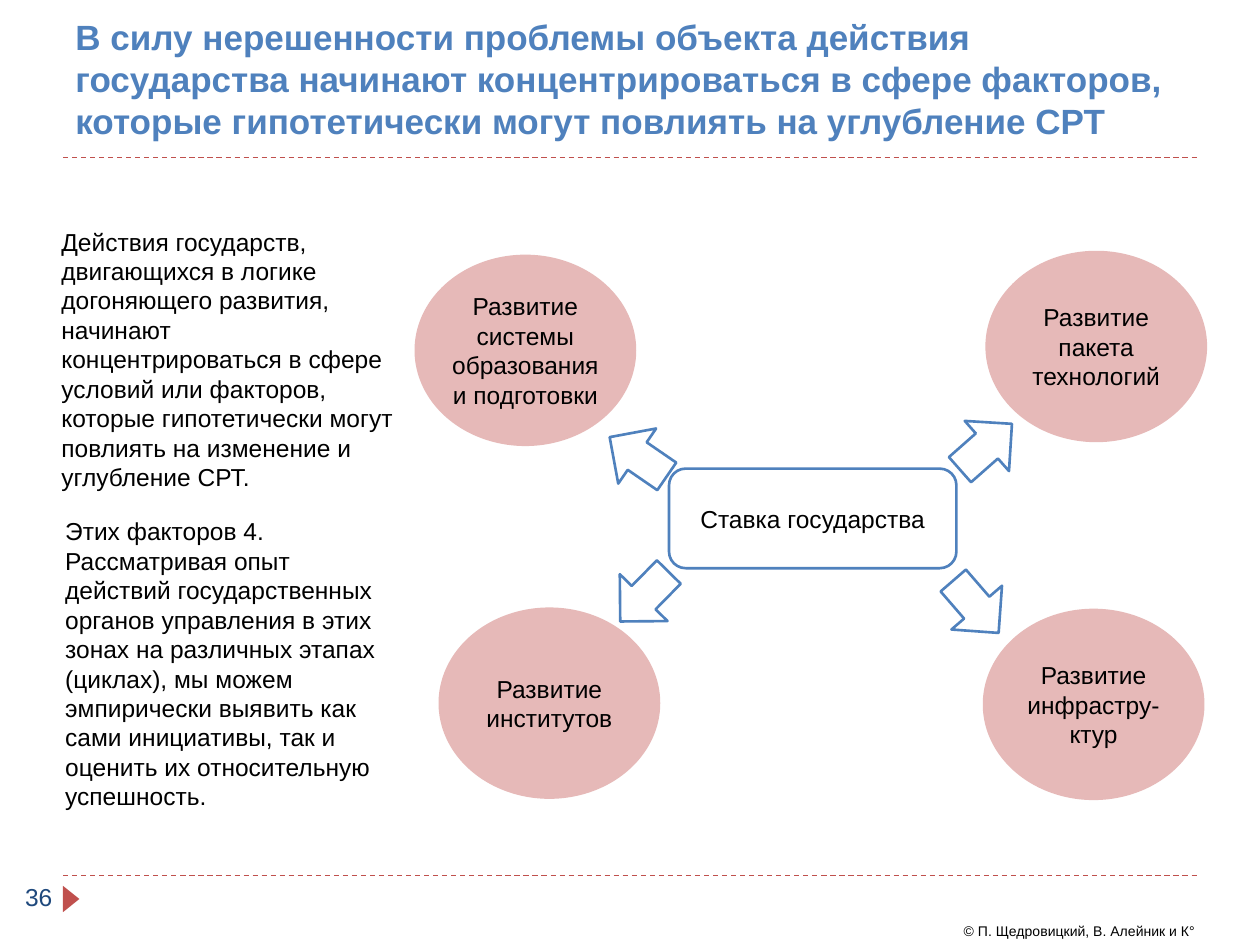
from lxml.etree import SubElement as Sub
from pptx import Presentation
from pptx.dml.color import RGBColor as RGB
from pptx.enum.dml import MSO_LINE as Dash
from pptx.enum.shapes import MSO_CONNECTOR as Conn, MSO_SHAPE as Kind
from pptx.enum.text import MSO_ANCHOR as Anchor, PP_ALIGN as Align
from pptx.oxml.ns import qn
from pptx.util import Pt

BLACK = RGB(0x00, 0x00, 0x00)
WHITE = RGB(0xFF, 0xFF, 0xFF)
BLUE = RGB(0x4F, 0x81, 0xBD)
NAVY = RGB(0x1F, 0x49, 0x7D)
RED = RGB(0xC0, 0x50, 0x4D)
PINK = RGB(0xE6, 0xB9, 0xB8)

INSET = (7.2, 3.6, 7.2, 3.6)


def write(shape, text, size=14, color=BLACK, bold=False, align=Align.LEFT,
          anchor=Anchor.TOP, inset=INSET):
    frame = shape.text_frame
    frame.word_wrap = True
    frame.vertical_anchor = anchor
    (frame.margin_left, frame.margin_top,
     frame.margin_right, frame.margin_bottom) = map(Pt, inset)
    para = frame.paragraphs[0]
    para.text = text
    para.alignment = align
    font = para.font
    font.name, font.size, font.bold = "Arial", Pt(size), bold
    font.color.rgb = color


def add_text(slide, box, text, **style):
    write(slide.shapes.add_textbox(*map(Pt, box)), text, **style)


def add_form(slide, kind, box, fill, line=None, turn=0):
    form = slide.shapes.add_shape(kind, *map(Pt, box))
    form.shadow.inherit = False
    form.rotation = turn
    form.fill.solid()
    form.fill.fore_color.rgb = fill
    if line is None:
        form.line.fill.background()
    else:
        form.line.color.rgb = line
        form.line.width = Pt(1.5)
    return form


def add_rule(slide, left, top, width):
    rule = slide.shapes.add_connector(
        Conn.STRAIGHT, Pt(left), Pt(top), Pt(left + width), Pt(top))
    rule.line.color.rgb = RED
    rule.line.width = Pt(0.75)
    rule.line.dash_style = Dash.DASH
    Sub(rule._element.spPr, qn("a:effectLst"))


def add_head(slide, left, top, width, height):
    add_rule(slide, left, top + height, width)
    add_text(slide, (left, top, width, height),
             "В силу нерешенности проблемы объекта действия государства "
             "начинают концентрироваться в сфере факторов, которые "
             "гипотетически могут повлиять на углубление СРТ",
             size=20, color=BLUE, bold=True, anchor=Anchor.MIDDLE)


def add_foot(slide, left, top, width):
    add_rule(slide, left, top, width)
    # Page marker and number
    add_form(slide, Kind.ISOSCELES_TRIANGLE,
             (left - 2.9, top + 8.6, 15.1, 9.4), RED, turn=90)
    add_text(slide, (left - 28.8, top, 32.4, 28.8), "36", color=NAVY)
    # Credit
    add_text(slide, (left + 507.6, top + 23, 174.2, 17.3),
             "© П. Щедровицкий, В. Алейник и К°", size=8)


def add_notes(slide, left, top, width):
    add_text(slide, (left, top, width, 160),
             "Действия государств, двигающихся в логике догоняющего "
             "развития, начинают концентрироваться в сфере условий или "
             "факторов, которые гипотетически могут повлиять на изменение "
             "и углубление СРТ.", inset=(7.2, 3.6, 2.9, 3.6))
    add_text(slide, (left + 2.2, top + 165.6, width - 2.2, 177),
             "Этих факторов 4. Рассматривая опыт действий государственных "
             "органов управления в этих зонах на различных этапах (циклах), "
             "мы можем эмпирически выявить как сами инициативы, так и "
             "оценить их относительную успешность.",
             inset=(7.2, 3.6, 0, 3.6))


def add_map(slide, left, top):
    # Central stake
    mid = {"align": Align.CENTER, "anchor": Anchor.MIDDLE}
    hub = add_form(slide, Kind.ROUNDED_RECTANGLE,
                   (left + 145.4, top + 124.5, 164.2, 56.9), WHITE, BLUE)
    write(hub, "Ставка государства", **mid)

    # Arrows out to the factors: x, y, turn
    for x, y, turn in ((108, 98.6, 34.5), (306.7, 92.9, 138.6),
                       (111.6, 178.6, 314.5), (301, 184.3, 229.1)):
        add_form(slide, Kind.LEFT_ARROW, (left + x, top + y, 39.6, 38.2),
                 WHITE, BLUE, turn)

    # Factors: x, y, text, inset
    for x, y, text, inset in (
            (0, 2.2, "Развитие системы образования и подготовки",
             (0, 3.6, 0, 3.6)),
            (326.2, 0, "Развитие пакета технологий", INSET),
            (13.7, 203.8, "Развитие институтов", INSET),
            (324.7, 204.5, "Развитие инфрастру-ктур", (0, 0, 0, 0))):
        oval = add_form(slide, Kind.OVAL,
                        (left + x, top + y, 126.7, 109.4), PINK)
        write(oval, text, inset=inset, **mid)


def main():
    deck = Presentation()
    deck.slide_width, deck.slide_height = Pt(720), Pt(540)
    slide = deck.slides.add_slide(deck.slide_layouts[6])
    add_head(slide, 36, 0, 648, 90)
    add_foot(slide, 36, 500.4, 648)
    add_notes(slide, 28, 126, 201.6)
    add_map(slide, 236.9, 143.3)
    deck.save("out.pptx")


if __name__ == "__main__":
    main()
